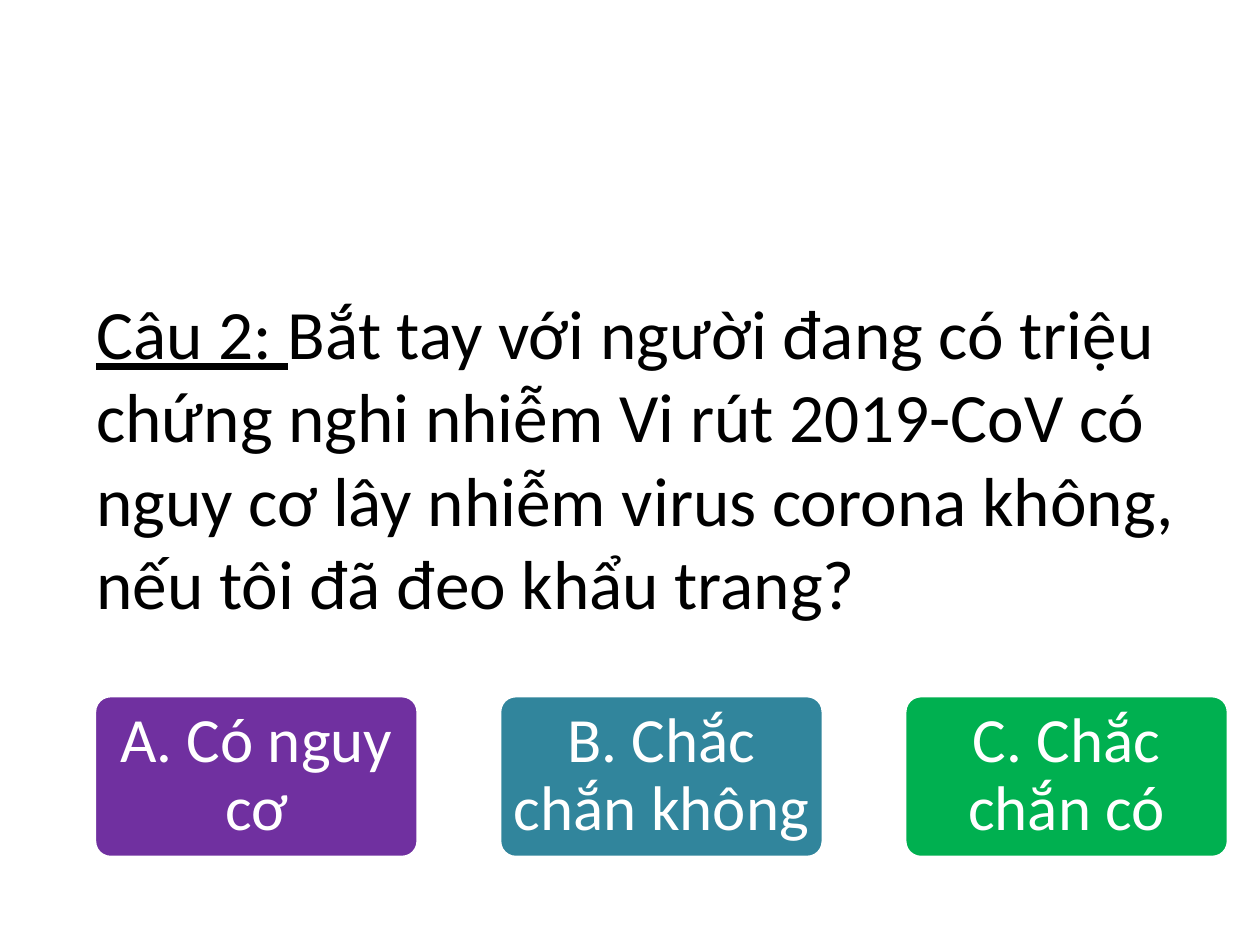
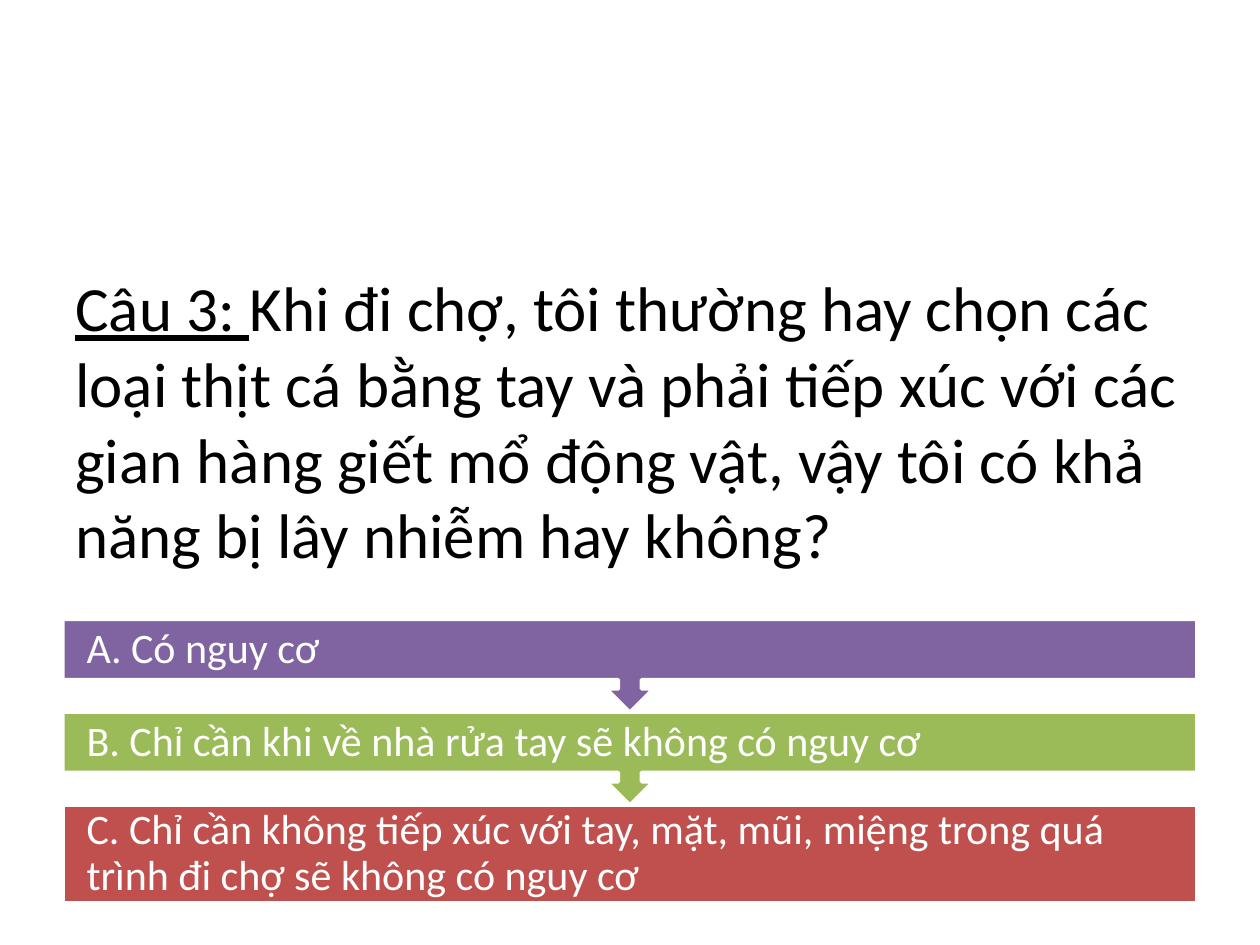
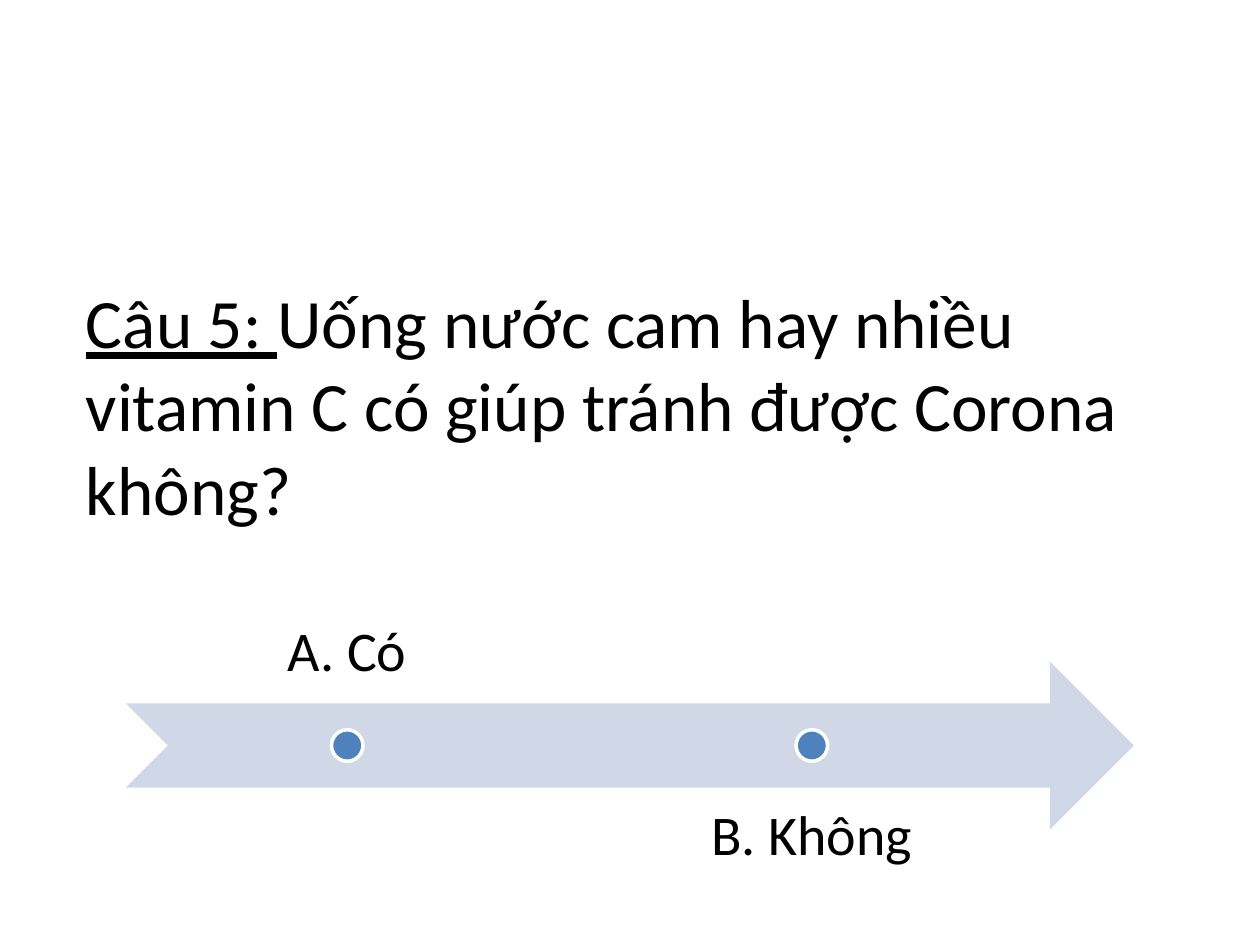
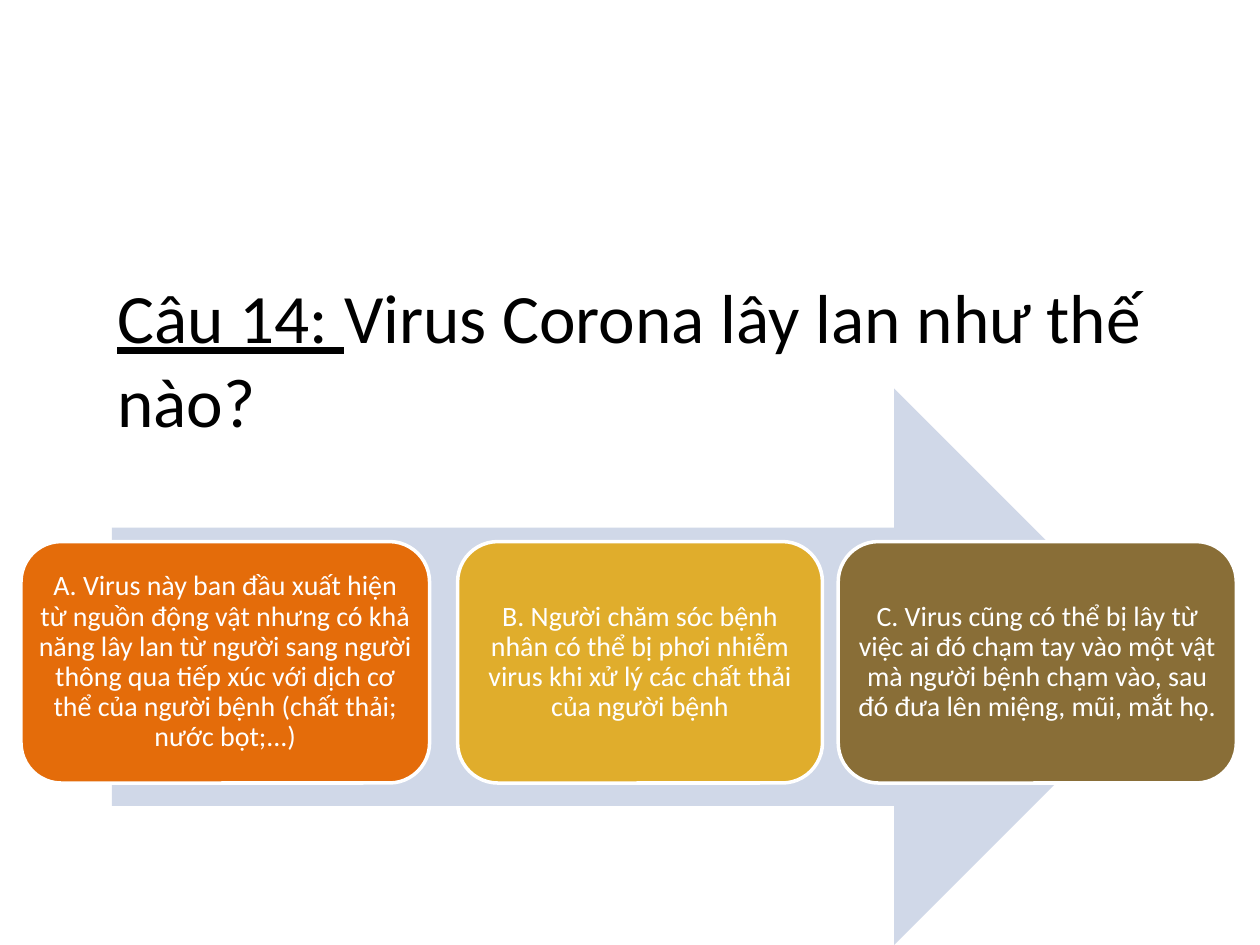
import pptx
import pptx.util
import pptx.dml.color
import pptx.enum.shapes
import pptx.enum.text

Pt = pptx.util.Pt
Shape = pptx.enum.shapes.MSO_SHAPE
Align = pptx.enum.text.PP_ALIGN
Anchor = pptx.enum.text.MSO_ANCHOR

FONT = "Calibri"
HEX = {
    "black": "000000", "white": "FFFFFF", "violet": "7030A0",
    "teal": "31859C", "green": "00B050", "purple": "8064A2",
    "lime": "9BBB59", "red": "C0504D", "pale": "D0D8E8",
    "blue": "4F81BD", "orange": "E46C0A", "gold": "E0AD2C",
    "brown": "896E37",
}

ASKS = [
    ("Câu 2: ", "Bắt tay với người đang có triệu chứng nghi nhiễm Vi rút "
     "2019-CoV có nguy cơ lây nhiễm virus corona không, nếu tôi đã đeo "
     "khẩu trang?", 39.6, (48, 162, 648, 198)),
    ("Câu 3: ", "Khi đi chợ, tôi thường hay chọn các loại thịt cá bằng tay "
     "và phải tiếp xúc với các gian hàng giết mổ động vật, vậy tôi có khả "
     "năng bị lây nhiễm hay không?", 36, (36, 144, 648, 192)),
    ("Câu 5: ", "Uống nước cam hay nhiều vitamin C có giúp tránh được "
     "Corona không?", 39.6, (42, 156, 642, 150)),
    ("Câu 14: ", "Virus Corona lây lan như thế nào?", 39.6,
     (60, 150.5, 648, 108)),
]
CARDS = [
    ("A. Có nguy cơ", "violet"),
    ("B. Chắc chắn không", "teal"),
    ("C. Chắc chắn có", "green"),
]
STEPS = [
    ("A. Có nguy cơ", "purple"),
    ("B. Chỉ cần khi về nhà rửa tay sẽ không có nguy cơ", "lime"),
    ("C. Chỉ cần không tiếp xúc với tay, mặt, mũi, miệng trong quá trình "
     "đi chợ sẽ không có nguy cơ", "red"),
]
MARKS = [("A. Có", 72, 336, Anchor.BOTTOM),
         ("B. Không", 337.5, 444, Anchor.TOP)]
WAYS = [
    ("A. Virus này ban đầu xuất hiện từ nguồn động vật nhưng có khả năng "
     "lây lan từ người sang người thông qua tiếp xúc với dịch cơ thể của "
     "người bệnh (chất thải; nước bọt;...)", "orange", 12, 233.5),
    ("B. Người chăm sóc bệnh nhân có thể bị phơi nhiễm virus khi xử lý các "
     "chất thải của người bệnh", "gold", 261.5, 208.5),
    ("C. Virus cũng có thể bị lây từ việc ai đó chạm tay vào một vật mà "
     "người bệnh chạm vào, sau đó đưa lên miệng, mũi, mắt họ.",
     "brown", 479, 227.5),
]


def tint(name):
    return pptx.dml.color.RGBColor.from_string(HEX[name])


def write(shape, runs, size, color="white", align=Align.CENTER,
          anchor=Anchor.MIDDLE, pad=(7.2, 3.6), lead=0.9):
    frame = shape.text_frame
    frame.word_wrap = True
    frame.vertical_anchor = anchor
    frame.margin_left = frame.margin_right = Pt(pad[0])
    frame.margin_top = frame.margin_bottom = Pt(pad[1])
    para = frame.paragraphs[0]
    para.alignment = align
    para.line_spacing = lead
    para.font.name = FONT
    para.font.size = Pt(size)
    para.font.color.rgb = tint(color)
    for text in runs:
        para.add_run().text = text
    return para


def draw(slide, kind, box, fill, edge=True):
    shape = slide.shapes.add_shape(kind, *map(Pt, box))
    shape.shadow.inherit = False
    shape.fill.solid()
    shape.fill.fore_color.rgb = tint(fill)
    if edge:
        shape.line.color.rgb = tint("white")
        shape.line.width = Pt(2)
    else:
        shape.line.fill.background()
    return shape


def label(slide, box):
    return slide.shapes.add_textbox(*map(Pt, box))


def cards(slide):
    for i, (text, fill) in enumerate(CARDS):
        card = draw(slide, Shape.ROUNDED_RECTANGLE,
                    (54 + i * 231.5, 397.5, 185, 92.5), fill)
        card.adjustments[0] = 0.1
        write(card, [text], 36, pad=(3, 3.5))


def steps(slide):
    last = len(STEPS) - 1
    for i in range(last, -1, -1):
        text, fill = STEPS[i]
        kind = Shape.RECTANGLE if i == last else Shape.DOWN_ARROW_CALLOUT
        high = 56 if i == last else 53
        step = draw(slide, kind, (36, 354 + i * 53, 648, high), fill)
        if i < last:
            step.adjustments[3] = 0.65
        write(step, [text], 24, align=Align.LEFT, pad=(13.5, 0))


def marks(slide):
    draw(slide, Shape.NOTCHED_RIGHT_ARROW, (72, 378, 576, 96), "pale", False)
    wide, dot = 252.8, 18
    for text, left, top, anchor in MARKS:
        write(label(slide, (left, top, wide, 72)), [text], 32, "black",
              anchor=anchor, pad=(18, 18))
        draw(slide, Shape.OVAL,
             (left + (wide - dot) / 2, 426 - dot / 2, dot, dot), "blue")


def ways(slide):
    draw(slide, Shape.RIGHT_ARROW, (64, 222, 606, 318), "pale", False)
    for text, fill, left, wide in WAYS:
        way = draw(slide, Shape.ROUNDED_RECTANGLE,
                   (left, 309.5, wide, 138), fill)
        write(way, [text], 16, pad=(3.5, 3.5))


def main():
    deck = pptx.Presentation()
    deck.slide_width, deck.slide_height = Pt(720), Pt(540)
    for ask, body in zip(ASKS, (cards, steps, marks, ways)):
        mark, text, size, box = ask
        slide = deck.slides.add_slide(deck.slide_layouts[6])
        para = write(label(slide, box), [mark, text], size, "black",
                     Align.LEFT, lead=1.0)
        para.runs[0].font.underline = True
        body(slide)
    deck.save("out.pptx")


if __name__ == "__main__":
    main()
